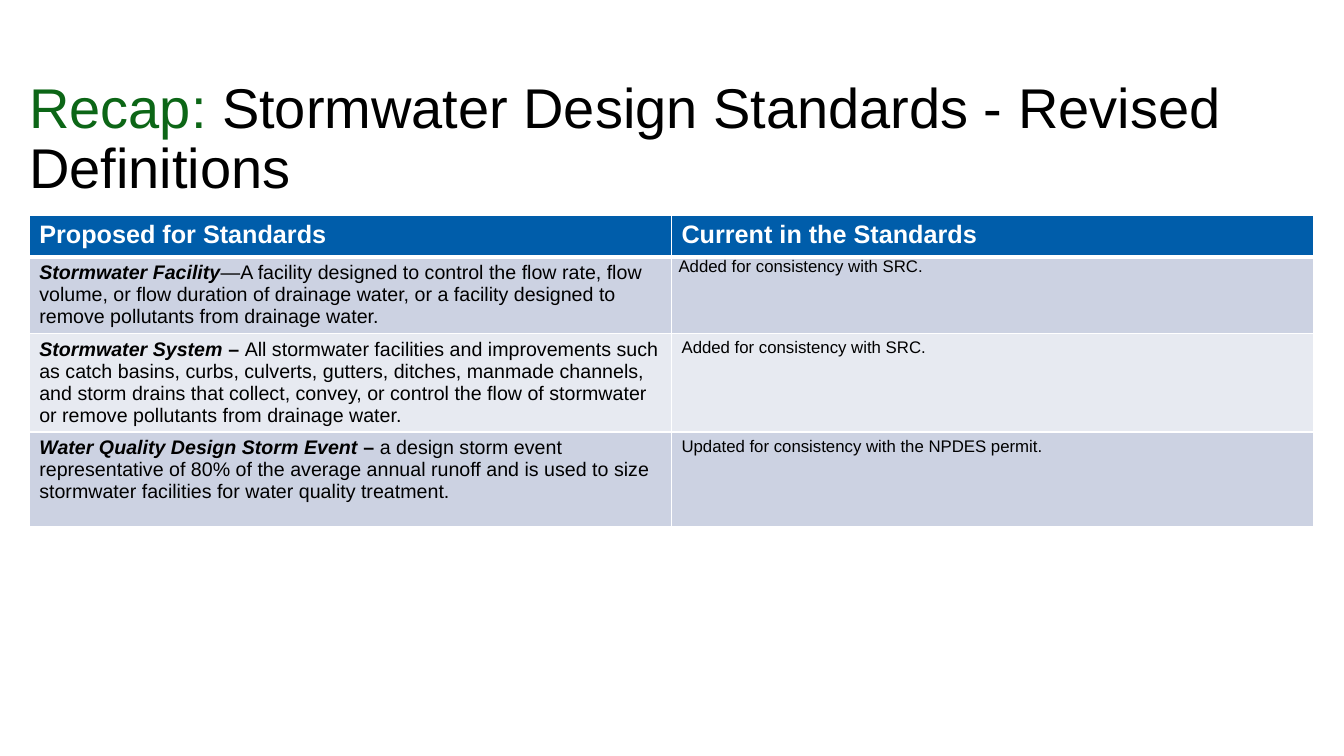
from pptx import Presentation
from pptx import util as u
from pptx.dml.color import RGBColor
from pptx.enum import text
from pptx.oxml.ns import qn
from lxml import etree

HUES = {"head": "005DAA", "odd": "CCD2E2", "even": "E7EAF1",
        "green": "0C6616", "black": "000000", "white": "FFFFFF"}

# Each row: term, dash, definition, note
ROWS = [
    ("Stormwater Facility", "",
     "―A facility designed to control the flow rate, flow volume, or flow "
     "duration of drainage water, or a facility designed to remove "
     "pollutants from drainage water.",
     "Added for consistency with SRC."),
    ("Stormwater System ", "– ",
     "All stormwater facilities and improvements such as catch basins, curbs, "
     "culverts, gutters, ditches, manmade channels, and storm drains that "
     "collect, convey, or control the flow of stormwater or remove "
     "pollutants from drainage water.",
     "Added for consistency with SRC."),
    ("Water Quality Design Storm Event ", "– ",
     "a design storm event representative of 80% of the average annual runoff "
     "and is used to size stormwater facilities for water quality treatment.",
     "Updated for consistency with the NPDES permit."),
]
TALL = [0.41, 0.75, 0.98, 0.94]


class Deck:
    """Holds the style and the current slide."""

    def __init__(self, show, font="Arial"):
        self.font = font
        self.slide = show.slides.add_slide(show.slide_layouts[5])

    def runs(self, para, parts):
        """Add runs given as (text, size, colour, bold, italic)."""
        for words, size, hue, bold, slant in parts:
            if not words:
                continue
            run = para.add_run()
            run.text = words
            font = run.font
            font.name, font.size = self.font, u.Pt(size)
            font.bold, font.italic = bold, slant
            font.color.rgb = RGBColor.from_string(HUES[hue])

    def title(self, box, parts):
        head = self.slide.shapes.title
        head.left, head.top, head.width, head.height = map(u.Inches, box)
        frame = head.text_frame
        frame.margin_left = frame.margin_right = 0
        frame.margin_top = frame.margin_bottom = 0
        frame.word_wrap = True
        frame.auto_size = text.MSO_AUTO_SIZE.NONE
        frame.vertical_anchor = text.MSO_ANCHOR.MIDDLE
        para = frame.paragraphs[0]
        para.alignment = text.PP_ALIGN.LEFT
        para.line_spacing = 0.9
        self.runs(para, parts)

    def table(self, left, top, wide, tall, cols):
        box = map(u.Inches, (left, top, wide, sum(tall)))
        grid = self.slide.shapes.add_table(len(tall), cols, *box).table
        for row, high in zip(grid.rows, tall):
            row.height = u.Inches(high)
        return grid

    def cell(self, cell, fill, parts, under=1):
        # White borders go before the fill in the cell's properties
        props = cell._tc.get_or_add_tcPr()
        for side, size in (("L", 1), ("R", 1), ("T", 1), ("B", under)):
            line = etree.SubElement(props, qn(f"a:ln{side}"), w=str(u.Pt(size)))
            paint = etree.SubElement(line, qn("a:solidFill"))
            etree.SubElement(paint, qn("a:srgbClr"), val=HUES["white"])
        cell.fill.solid()
        cell.fill.fore_color.rgb = RGBColor.from_string(HUES[fill])
        self.runs(cell.text_frame.paragraphs[0], parts)


def main():
    show = Presentation()
    show.slide_width, show.slide_height = u.Inches(13.33), u.Inches(7.5)
    deck = Deck(show)

    # Title
    deck.title((0.29, 0.67, 12.74, 1.45), [
        ("Recap: ", 40, "green", False, False),
        ("Stormwater Design Standards - Revised Definitions",
         40, "black", False, False)])

    # Table header
    grid = deck.table(0.29, 2.14, 12.74, TALL, 2)
    for col, name in enumerate(("Proposed for Standards",
                                "Current in the Standards")):
        deck.cell(grid.cell(0, col), "head",
                  [(name, 18, "white", True, False)], under=3)

    # Definitions and notes
    for num, (term, dash, words, note) in enumerate(ROWS, 1):
        fill = "odd" if num % 2 else "even"
        deck.cell(grid.cell(num, 0), fill, [
            (term, 14, "black", True, True),
            (dash, 14, "black", True, False),
            (words, 14, "black", False, False)])
        deck.cell(grid.cell(num, 1), fill,
                  [(note, 12, "black", False, False)])

    # The first note sits tight against the top of its cell
    tight = grid.cell(1, 1)
    tight.margin_left = tight.margin_right = u.Inches(0.07)
    tight.margin_top = tight.margin_bottom = 0

    show.save("out.pptx")


if __name__ == "__main__":
    main()
